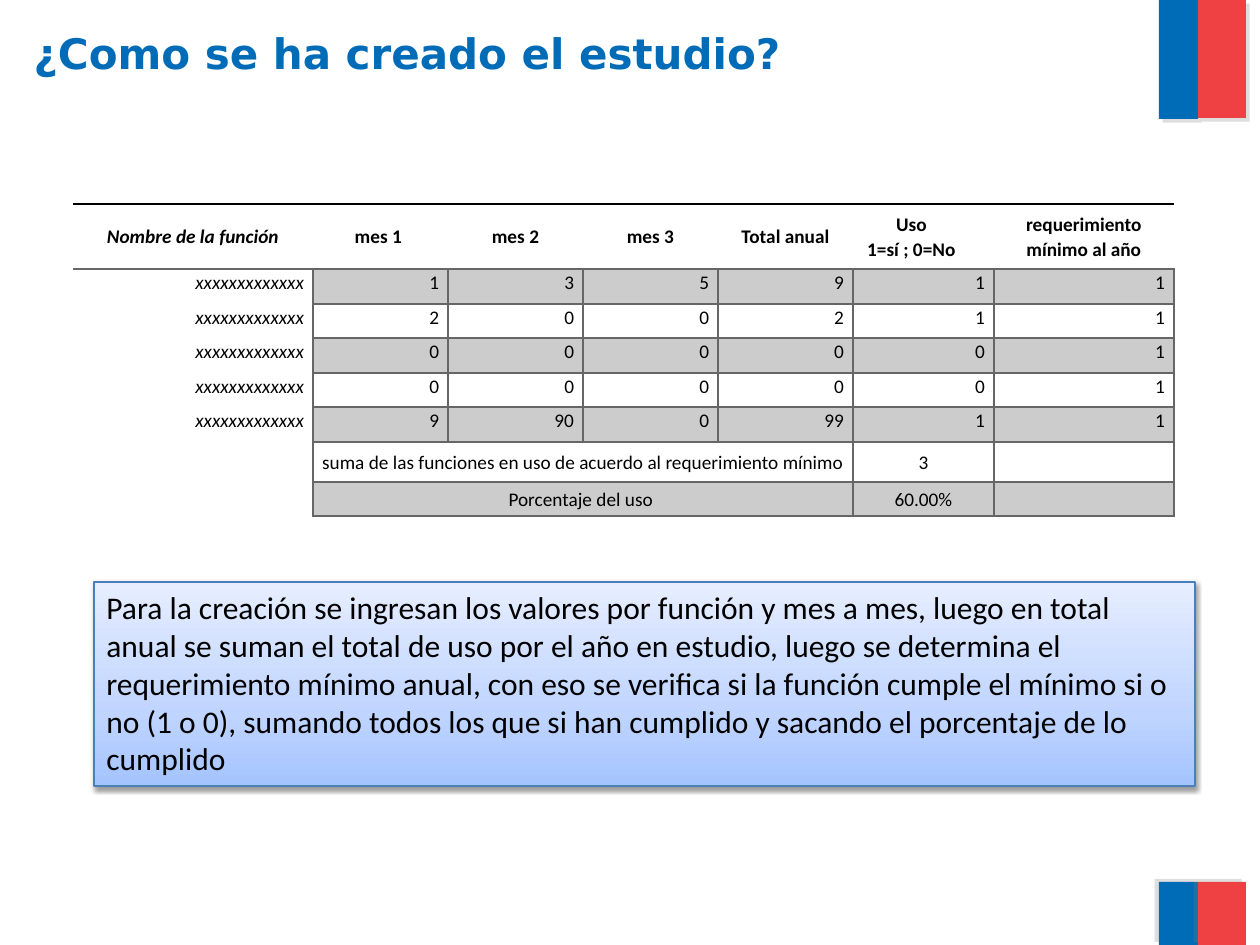
from dataclasses import dataclass

from lxml.etree import SubElement
from pptx import Presentation
from pptx.dml.color import RGBColor
from pptx.enum.shapes import MSO_SHAPE
from pptx.enum.text import MSO_ANCHOR as Anchor, MSO_AUTO_SIZE as AutoSize, PP_ALIGN as Align
from pptx.oxml.ns import qn
from pptx.util import Emu, Pt

EMU_PER_INCH = 914400
PX_PER_INCH = 126


@dataclass(frozen=True)
class Theme:
    blue: str = "006CB7"
    red: str = "EF4144"
    ink: str = "000000"
    paper: str = "FFFFFF"
    band: str = "CCCCCC"
    grid: str = "666666"
    note_line: str = "4B7EBC"
    note_stops: tuple = ((0, "A4C4FF"), (35, "BFD4FF"), (100, "E6EEFF"))
    title_font: str = "DejaVu Sans"
    body_font: str = "Calibri"
    title_size: int = 24
    note_size: int = 18
    table_size: int = 11


@dataclass(frozen=True)
class Box:
    left: int
    top: int
    width: int
    height: int

    def emu(self) -> tuple:
        return tuple(px(v) for v in (self.left, self.top, self.width, self.height))


@dataclass(frozen=True)
class Shadow:
    color: str
    alpha: int
    blur: float
    distance: float
    angle: int


@dataclass(frozen=True)
class Stripe:
    box: Box
    color: str
    shadow: Shadow


THEME = Theme()
UPPER_SHADOW = Shadow("808080", 25, 0, 3, 45)
LOWER_SHADOW = Shadow("808080", 25, 0, 3, 215)
NOTE_SHADOW = Shadow("000000", 38, 3.1, 1.6, 90)
STRIPES = [
    Stripe(Box(1159, -1, 39, 120), THEME.blue, UPPER_SHADOW),
    Stripe(Box(1198, 0, 48, 118), THEME.red, UPPER_SHADOW),
    Stripe(Box(1159, 882, 39, 63), THEME.blue, LOWER_SHADOW),
    Stripe(Box(1198, 882, 48, 63), THEME.red, LOWER_SHADOW),
]

TABLE_BOX = Box(73, 204, 1101, 312)
COLUMNS = [240, 135, 135, 135, 135, 141, 180]
ROWS = [65, 35, 34, 35, 34, 35, 40, 34]
HEADER = ["Nombre de la función", "mes 1 ", "mes 2", "mes 3", "Total anual",
          "Uso\n1=sí ; 0=No", "requerimiento mínimo al año"]
VALUES = [(1, 3, 5, 9, 1, 1), (2, 0, 0, 2, 1, 1), (0, 0, 0, 0, 0, 1),
          (0, 0, 0, 0, 0, 1), (9, 90, 0, 99, 1, 1)]
SUMMARY = [("suma de las funciones en uso de acuerdo al requerimiento mínimo", "3"),
           ("Porcentaje del uso ", "60.00%")]
NOTE = ("Para la creación se ingresan los valores por función y mes a mes, luego en total "
        "anual se suman el total de uso por el año en estudio, luego se determina el "
        "requerimiento mínimo anual, con eso se verifica si la función cumple el mínimo "
        "si o no (1 o 0), sumando todos los que si han cumplido y sacando el porcentaje "
        "de lo cumplido")


def px(value: int) -> Emu:
    return Emu(round(value * EMU_PER_INCH / PX_PER_INCH))


def style(para, font: str, size: int, color: str, align=Align.LEFT, bold=False, italic=False) -> None:
    para.alignment = align
    para.font.name, para.font.size = font, Pt(size)
    para.font.bold, para.font.italic = bold, italic
    para.font.color.rgb = RGBColor.from_string(color)


def add_color(parent, color: str):
    return SubElement(parent, qn("a:srgbClr"), val=color)


def set_shadow(shape, shadow: Shadow) -> None:
    shape.shadow.inherit = False
    effects = shape._element.spPr.find(qn("a:effectLst"))
    outer = SubElement(effects, qn("a:outerShdw"), blurRad=str(Pt(shadow.blur)),
                       dist=str(Pt(shadow.distance)), dir=str(shadow.angle * 60000),
                       algn="ctr", rotWithShape="0")
    SubElement(add_color(outer, shadow.color), qn("a:alpha"), val=str(shadow.alpha * 1000))


def draw_stripe(page, stripe: Stripe) -> None:
    shape = page.shapes.add_shape(MSO_SHAPE.RECTANGLE, *stripe.box.emu())
    shape.fill.solid()
    shape.fill.fore_color.rgb = RGBColor.from_string(stripe.color)
    shape.line.fill.background()
    set_shadow(shape, stripe.shadow)


def draw_title(page, text: str, box: Box) -> None:
    title = page.shapes.title
    title.left, title.top, title.width, title.height = box.emu()
    title.text_frame.text = text
    title.text_frame.vertical_anchor = Anchor.TOP
    style(title.text_frame.paragraphs[0], THEME.title_font, THEME.title_size, THEME.blue, bold=True)


def set_borders(cell, colors: dict) -> None:
    props = cell._tc.get_or_add_tcPr()
    for side in "LRTB":
        line = SubElement(props, qn(f"a:ln{side}"), w=str(Pt(1)))
        if side in colors:
            add_color(SubElement(line, qn("a:solidFill")), colors[side])
        else:
            SubElement(line, qn("a:noFill"))


def fill_cell(cell, text: str, row: int, col: int) -> None:
    is_header, is_name = row == 0, col == 0
    is_summary = row > len(VALUES)
    if is_header:
        borders = {"T": THEME.ink, "B": THEME.grid}
    elif is_name:
        borders = {"R": THEME.grid, **({"T": THEME.grid} if row == 1 else {})}
    else:
        borders = dict.fromkeys("LRTB", THEME.grid)
    set_borders(cell, borders)
    cell.fill.solid()
    banded = row % 2 == 1 and not is_name
    cell.fill.fore_color.rgb = RGBColor.from_string(THEME.band if banded else THEME.paper)

    cell.margin_left = cell.margin_right = px(9)
    cell.margin_top = cell.margin_bottom = 0
    centered = is_header or is_summary
    cell.vertical_anchor = Anchor.MIDDLE if centered else Anchor.TOP
    cell.text_frame.text = text
    for para in cell.text_frame.paragraphs:
        style(para, THEME.body_font, THEME.table_size, THEME.ink,
              Align.CENTER if centered else Align.RIGHT, bold=is_header, italic=is_name)
        para.line_spacing = 1.07
        if not text:
            SubElement(para._p, qn("a:endParaRPr"), sz=str(THEME.table_size * 100))


def draw_table(page) -> None:
    names = [["x" * 13, *map(str, values)] for values in VALUES]
    totals = [["", label, "", "", "", total, ""] for label, total in SUMMARY]
    content = [HEADER, *names, *totals]
    table = page.shapes.add_table(len(ROWS), len(COLUMNS), *TABLE_BOX.emu()).table
    table.first_row = table.horz_banding = False
    for column, width in zip(table.columns, COLUMNS):
        column.width = px(width)
    for row, height in zip(table.rows, ROWS):
        row.height = px(height)
    for r, texts in enumerate(content):
        for c, text in enumerate(texts):
            fill_cell(table.cell(r, c), text, r, c)
    for r in range(len(ROWS) - len(SUMMARY), len(ROWS)):
        table.cell(r, 1).merge(table.cell(r, 4))
    # The first line of the use heading sits left of centre
    use_heading = table.cell(0, 5).text_frame.paragraphs[0]
    use_heading._p.get_or_add_pPr().set("marR", str(px(24)))


def draw_note(page, text: str, box: Box) -> None:
    note = page.shapes.add_shape(MSO_SHAPE.RECTANGLE, *box.emu())
    note.fill.gradient()
    note.fill.gradient_angle = 90
    stops = note._element.spPr.find(qn("a:gradFill")).find(qn("a:gsLst"))
    for stop in list(stops):
        stops.remove(stop)
    for position, color in THEME.note_stops:
        add_color(SubElement(stops, qn("a:gs"), pos=str(position * 1000)), color)
    note.line.color.rgb = RGBColor.from_string(THEME.note_line)
    note.line.width = Pt(0.75)
    set_shadow(note, NOTE_SHADOW)
    frame = note.text_frame
    frame.text = text
    frame.word_wrap = True
    frame.auto_size = AutoSize.SHAPE_TO_FIT_TEXT
    frame.vertical_anchor = Anchor.TOP
    style(frame.paragraphs[0], THEME.body_font, THEME.note_size, THEME.ink)


def main() -> None:
    deck = Presentation()
    deck.slide_width, deck.slide_height = px(1260), px(945)
    page = deck.slides.add_slide(deck.slide_layouts[5])
    # Flag stripes in the right corners
    for stripe in STRIPES:
        draw_stripe(page, stripe)
    # Heading, usage table and explanation
    draw_title(page, "¿Como se ha creado el estudio?", Box(21, 21, 1125, 158))
    draw_table(page)
    draw_note(page, NOTE, Box(94, 582, 1101, 204))
    deck.save("out.pptx")


if __name__ == "__main__":
    main()
